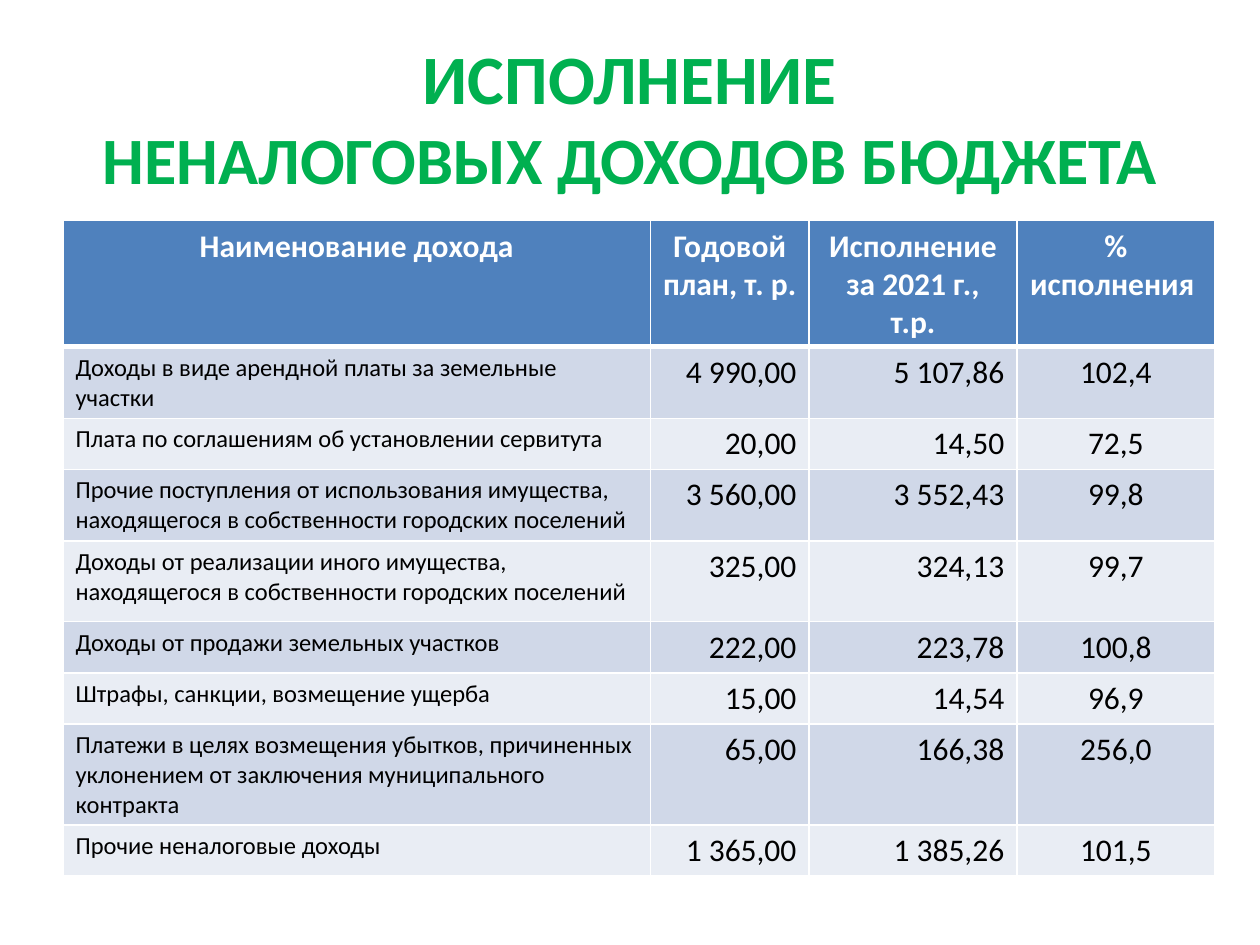
from lxml.etree import SubElement
from pptx import Presentation
from pptx.dml.color import RGBColor
from pptx.enum.text import MSO_ANCHOR, PP_ALIGN as Align
from pptx.oxml.ns import qn
from pptx.util import Cm, Pt

FONT = "Calibri"
TITLE = [("ИСПОЛНЕНИЕ", 39.6), ("НЕНАЛОГОВЫХ ДОХОДОВ БЮДЖЕТА", 37.8)]
HEADER = ["Наименование дохода", "Годовой план, т. р.",
          "Исполнение за 2021 г., т.р.", "% исполнения "]
INCOME = [
    ("Доходы в виде арендной платы за земельные участки",
     "4 990,00", "5 107,86", "102,4"),
    ("Плата по соглашениям об установлении сервитута",
     "20,00", "14,50", "72,5"),
    ("Прочие поступления от использования имущества, "
     "находящегося в собственности городских поселений",
     "3 560,00", "3 552,43", "99,8"),
    ("Доходы от реализации иного имущества, "
     "находящегося в собственности городских поселений",
     "325,00", "324,13", "99,7"),
    ("Доходы от продажи земельных участков", "222,00", "223,78", "100,8"),
    ("Штрафы, санкции, возмещение ущерба", "15,00", "14,54", "96,9"),
    ("Платежи в целях возмещения убытков, причиненных "
     "уклонением от заключения муниципального контракта",
     "65,00", "166,38", "256,0"),
    ("Прочие неналоговые доходы", "1 365,00", "1 385,26", "101,5"),
]
COL_WIDTHS = [11.84, 3.2, 4.19, 3.99]
ROW_HEIGHT, TALL_ROW, TALL_HEIGHT = 1.03, 4, 1.63
BODY_ALIGN = [Align.LEFT, Align.RIGHT, Align.RIGHT, Align.CENTER]
BODY_SIZES = [14, 18, 18, 18]
HEADER_FILL, BANDS = "4F81BD", ["E9EDF4", "D0D8E8"]


def rgb(color):
    return RGBColor.from_string(color)


def add_run(p, text, size, color, bold):
    r = p.add_run()
    r.text = text
    for name, value in {"name": FONT, "size": Pt(size), "bold": bold}.items():
        setattr(r.font, name, value)
    r.font.color.rgb = rgb(color)


def set_borders(cell, bottom):
    """White cell borders; these must precede the fill in the cell XML."""
    tc_pr = cell._tc.get_or_add_tcPr()
    for side, width in {"L": 1, "R": 1, "T": 1, "B": bottom}.items():
        ln = SubElement(tc_pr, qn(f"a:ln{side}"), w=str(Pt(width)))
        fill = SubElement(ln, qn("a:solidFill"))
        SubElement(fill, qn("a:srgbClr"), val="FFFFFF")


def add_title(s, left, top, width, height):
    tf = s.shapes.add_textbox(Cm(left), Cm(top), Cm(width), Cm(height)).text_frame
    tf.word_wrap = True
    tf.vertical_anchor = MSO_ANCHOR.MIDDLE
    p = tf.paragraphs[0]
    p.alignment = Align.CENTER
    for i, (text, size) in enumerate(TITLE):
        if i:
            p.add_line_break()
        add_run(p, text, size, "00B050", True)


def add_income_table(s, left, top):
    rows = [HEADER, *INCOME]
    heights = [TALL_HEIGHT if i == TALL_ROW else ROW_HEIGHT
               for i in range(len(rows))]
    table = s.shapes.add_table(len(rows), len(COL_WIDTHS), Cm(left), Cm(top),
                               Cm(sum(COL_WIDTHS)), Cm(sum(heights))).table
    for col, width in zip(table.columns, COL_WIDTHS):
        col.width = Cm(width)
    for i, (values, height) in enumerate(zip(rows, heights)):
        table.rows[i].height = Cm(height)
        header = i == 0
        for j, text in enumerate(values):
            cell = table.cell(i, j)
            set_borders(cell, 3 if header else 1)
            cell.fill.solid()
            cell.fill.fore_color.rgb = rgb(HEADER_FILL if header else BANDS[i % 2])
            p = cell.text_frame.paragraphs[0]
            p.alignment = Align.CENTER if header else BODY_ALIGN[j]
            add_run(p, text, 18 if header else BODY_SIZES[j],
                    "FFFFFF" if header else "000000", header)


def main():
    prs = Presentation()
    prs.slide_width, prs.slide_height = Cm(25.4), Cm(19.05)
    s = prs.slides.add_slide(prs.slide_layouts[6])
    # Heading
    add_title(s, 1.27, 0.76, 22.86, 3.18)
    # Plan and execution by kind of income
    add_income_table(s, 1.27, 4.45)
    prs.save("out.pptx")


if __name__ == "__main__":
    main()
